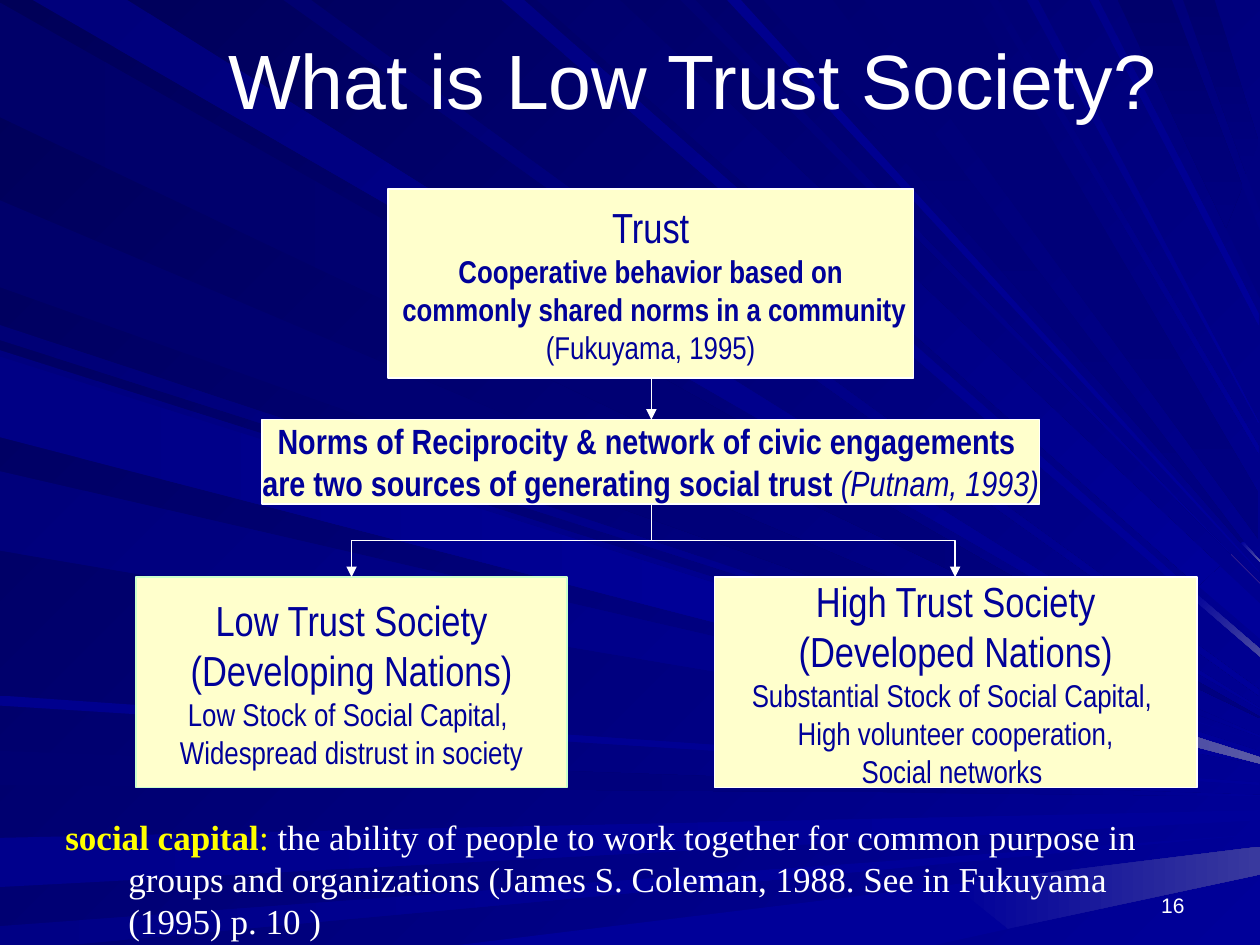
import pptx
import pptx.util
from pptx.dml.color import RGBColor
from pptx.enum.shapes import MSO_CONNECTOR, MSO_SHAPE
from pptx.enum.text import MSO_ANCHOR, PP_ALIGN
from pptx.oxml import parse_xml
from pptx.oxml.ns import nsdecls, qn

PX = 9144  # EMU per px, 100 px to the inch
Pt = pptx.util.Pt

THEME = {
    "ground": ("000058", "000099", 45),
    "box": "FFFFCC", "edge": "FFFFFF", "mint": "CCFFCC", "rule": 0.75,
    "text": {  # colour, then font values
        "title": ("FFFFFF", dict(name="Arial", size=Pt(44))),
        "page": ("FFFFFF", dict(name="Arial", size=Pt(12))),
        "head": ("000099", dict(name="Arial Narrow", size=Pt(24))),
        "body": ("000099", dict(name="Arial Narrow", size=Pt(18))),
        "strong": ("000099", dict(name="Arial Narrow", size=Pt(18), bold=True)),
        "claim": ("000099", dict(name="Arial Narrow", size=Pt(20), bold=True)),
        "cite": ("000099", dict(name="Arial Narrow", size=Pt(20), italic=True)),
        "term": ("FFFF00", dict(name="Times New Roman", size=Pt(20), bold=True)),
        "colon": ("FFFF00", dict(name="Times New Roman", size=Pt(20))),
        "note": ("FFFFFF", dict(name="Times New Roman", size=Pt(20))),
    },
}

# Boxes: place, edge, paragraphs of (text, style) runs
BOXES = [
    ((308, 150, 417, 150), "edge", [
        [("Trust", "head")],
        [("Cooperative behavior based on", "strong")],
        [(" commonly shared norms in a community", "strong")],
        [("(Fukuyama, 1995)", "body")]]),
    ((567, 458, 383, 167), "edge", [
        [("High Trust Society", "head")],
        [("(Developed Nations)", "head")],
        [("Substantial Stock of Social Capital, ", "body")],
        [("High volunteer cooperation,", "body")],
        [("Social networks ", "body")]]),
    ((108, 458, 342, 167), "mint", [
        [("Low Trust Society", "head")],
        [("(Developing Nations)", "head")],
        [("Low Stock of Social Capital, ", "body")],
        [("Widespread distrust in society", "body")]]),
    ((208, 333, 617, 67), "edge", [
        [("Norms of Reciprocity & network of civic engagements ", "claim")],
        [("are two sources of generating social trust ", "claim"),
         ("(Putnam, 1993)", "cite")]]),
]

# Free text: place, anchor, alignment, hanging indent, runs
NOTES = [
    ((717, 683, 233, 50), "BOTTOM", "RIGHT", 0, [("16", "page")]),
    ((42, 642, 908, 110), "TOP", "LEFT", 50, [
        ("social capital", "term"), (":", "colon"),
        (" the ability of people to work together for common purpose in groups "
         "and organizations (James S. Coleman, 1988. See in Fukuyama (1995) p. 10 )",
         "note")]),
    ((125, 0, 850, 125), "MIDDLE", "CENTER", 0,
     [("What is Low Trust Society?", "title")]),
]

# Arrows: start and end points
ARROWS = [((517, 400), (279, 458)), ((517, 400), (758, 458)),
          ((517, 300), (517, 333))]

# Backdrop rays: first colour, last colour, angle, corners
RAYS = [
    ("000069", "000080", 0, "556,317 0,2 0,93 529,345 1000,570 1000,569"),
    ("00007B", "000099", 45, "577,298 101,0 26,0 563,310 1000,563 1000,562"),
    ("000071", "000080", 0, "0,623 701,629 701,621 0,596"),
    ("000080", "000099", 0, "1000,632 1000,631 701,621 701,629"),
    ("00008C", "000099", 0, "0,704 831,660 831,647 0,665"),
    ("000099", "000099", 0, "1000,651 1000,643 831,647 831,660"),
    ("000099", "000099", 0, "1000,662 628,689 628,697"),
    ("000085", "000099", 0, "0,750 54,750 628,697 628,689 0,735"),
    ("000099", "000099", 0, "742,750 801,737 756,702 364,750"),
    ("000099", "39399E", 0, "1000,694 1000,672 756,702 800,737"),
    ("000099", "000099", 0, "1000,589 873,547 873,548"),
    ("000076", "000099", 45, "0,270 873,548 873,547 0,258"),
    ("000080", "000099", 0, "1000,585 1000,584 873,529 873,539"),
    ("00006B", "000080", 0, "0,228 873,539 873,529 0,159"),
    ("000083", "000099", 45, "398,0 944,473 947,469 416,0"),
    ("000099", "4A4AA1", 45, "1000,521 1000,515 947,469 944,473"),
    ("000099", "000099", 0, "1000,507 1000,479 968,449 951,465"),
    ("00006D", "000099", 45, "426,0 951,465 968,449 492,0"),
    ("FF9999", "FF9999", 0, "1000,463 977,440 1000,463"),
    ("000073", "000099", 45, "540,0 977,440 552,0"),
    ("000073", "000080", 90, "606,0 985,431 987,430 661,0"),
    ("000099", "5A5AA6", 45, "1000,446 1000,445 987,430 985,431"),
    ("000080", "000080", 0, "1000,237 1000,183 986,148 973,181"),
    ("00006B", "000080", 90, "887,0 973,181 986,148 930,0"),
    ("00006D", "000080", 90, "964,0 939,0 989,138 999,113"),
    ("000080", "000080", 0, "989,138 1000,167 1000,114 999,113"),
    ("00007E", "000099", 45, "0,342 999,602 999,596 0,278"),
    ("00007B", "000099", 45, "0,437 999,606 999,605 0,374"),
    ("00008E", "000099", 0, "0,560 999,623 999,621 0,552"),
    ("000070", "000099", 45, "225,0 999,552 999,547 247,0"),
    ("00008E", "000099", 45, "577,0 999,454 999,453 588,0"),
    ("000073", "000080", 90, "770,0 686,0 999,428 999,390 998,390"),
    ("000078", "000099", 45, "785,0 999,360 999,354 792,0"),
    ("000085", "000099", 45, "815,0 999,336 999,335 824,0"),
    ("00008A", "000099", 45, "999,249 872,0 865,0 999,258"),
    ("000085", "000099", 0, "0,283 0,347 633,511 635,498 637,485"),
    ("000099", "5A5AA6", 0, "1000,601 637,485 635,498 633,511 1000,606"),
]


def rgb(code):
    return RGBColor.from_string(code)


def emu(*sizes):
    return [round(size * PX) for size in sizes]


def blend(fill, first, last, angle):
    if first == last:
        fill.solid()
        fill.fore_color.rgb = rgb(first)
        return
    fill.gradient()
    fill.gradient_angle = -angle % 360
    for stop, code in zip(fill.gradient_stops, (first, last)):
        stop.color.rgb = rgb(code)


def write(para, runs, align):
    para.alignment = getattr(PP_ALIGN, align)
    for words, style in runs:
        run = para.add_run()
        run.text = words
        code, values = THEME["text"][style]
        for key, value in values.items():
            setattr(run.font, key, value)
        run.font.color.rgb = rgb(code)


def add_ray(slide, first, last, angle, corners):
    points = [tuple(map(int, pair.split(","))) for pair in corners.split()]
    pen = slide.shapes.build_freeform(*points[0], scale=PX)
    pen.add_line_segments(points[1:], close=True)
    ray = pen.convert_to_shape()
    ray.shadow.inherit = False
    ray.line.fill.background()
    blend(ray.fill, first, last, angle)


def add_box(slide, place, edge, paras):
    box = slide.shapes.add_shape(MSO_SHAPE.RECTANGLE, *emu(*place))
    box.shadow.inherit = False
    box.fill.solid()
    box.fill.fore_color.rgb = rgb(THEME["box"])
    box.line.color.rgb = rgb(THEME[edge])
    box.line.width = Pt(THEME["rule"])
    frame = box.text_frame
    frame.word_wrap = False
    frame.vertical_anchor = MSO_ANCHOR.MIDDLE
    for i, runs in enumerate(paras):
        para = frame.add_paragraph() if i else frame.paragraphs[0]
        write(para, runs, "CENTER")


def add_note(slide, place, anchor, align, hang, runs):
    frame = slide.shapes.add_textbox(*emu(*place)).text_frame
    frame.word_wrap = True
    frame.vertical_anchor = getattr(MSO_ANCHOR, anchor)
    para = frame.paragraphs[0]
    if hang:
        props = para._p.get_or_add_pPr()
        props.set("marL", str(hang * PX))
        props.set("indent", str(-hang * PX))
    write(para, runs, align)


def add_arrow(slide, start, end):
    (x0, y0), (x1, y1) = start, end
    kind, ends, turn = MSO_CONNECTOR.STRAIGHT, (x0, y0, x1, y1), 0
    if x0 != x1:
        # An elbow that leaves downward is a sideways one, turned a quarter
        kind = MSO_CONNECTOR.ELBOW
        side, turn = (1, 90) if x1 < x0 else (-1, 270)
        midx, midy = (x0 + x1) / 2, (y0 + y1) / 2
        dx, dy = side * (y1 - y0) / 2, abs(x1 - x0) / 2
        ends = (midx - dx, midy - dy, midx + dx, midy + dy)
    arrow = slide.shapes.add_connector(kind, *emu(*ends))
    arrow.line.color.rgb = rgb(THEME["edge"])
    arrow.line.width = Pt(THEME["rule"])
    props = arrow._element.spPr
    if turn:
        props.find(qn("a:xfrm")).set("rot", str(turn * 60000))
    tip = parse_xml(f'<a:tailEnd {nsdecls("a")} type="triangle"/>')
    props.find(qn("a:ln")).append(tip)
    props.append(parse_xml(f'<a:effectLst {nsdecls("a")}/>'))


def main():
    deck = pptx.Presentation()
    deck.slide_width, deck.slide_height = emu(1000, 750)
    slide = deck.slides.add_slide(deck.slide_layouts[6])
    blend(slide.background.fill, *THEME["ground"])
    for draw, items in ((add_ray, RAYS), (add_box, BOXES),
                        (add_arrow, ARROWS), (add_note, NOTES)):
        for item in items:
            draw(slide, *item)
    deck.save("out.pptx")


if __name__ == "__main__":
    main()
